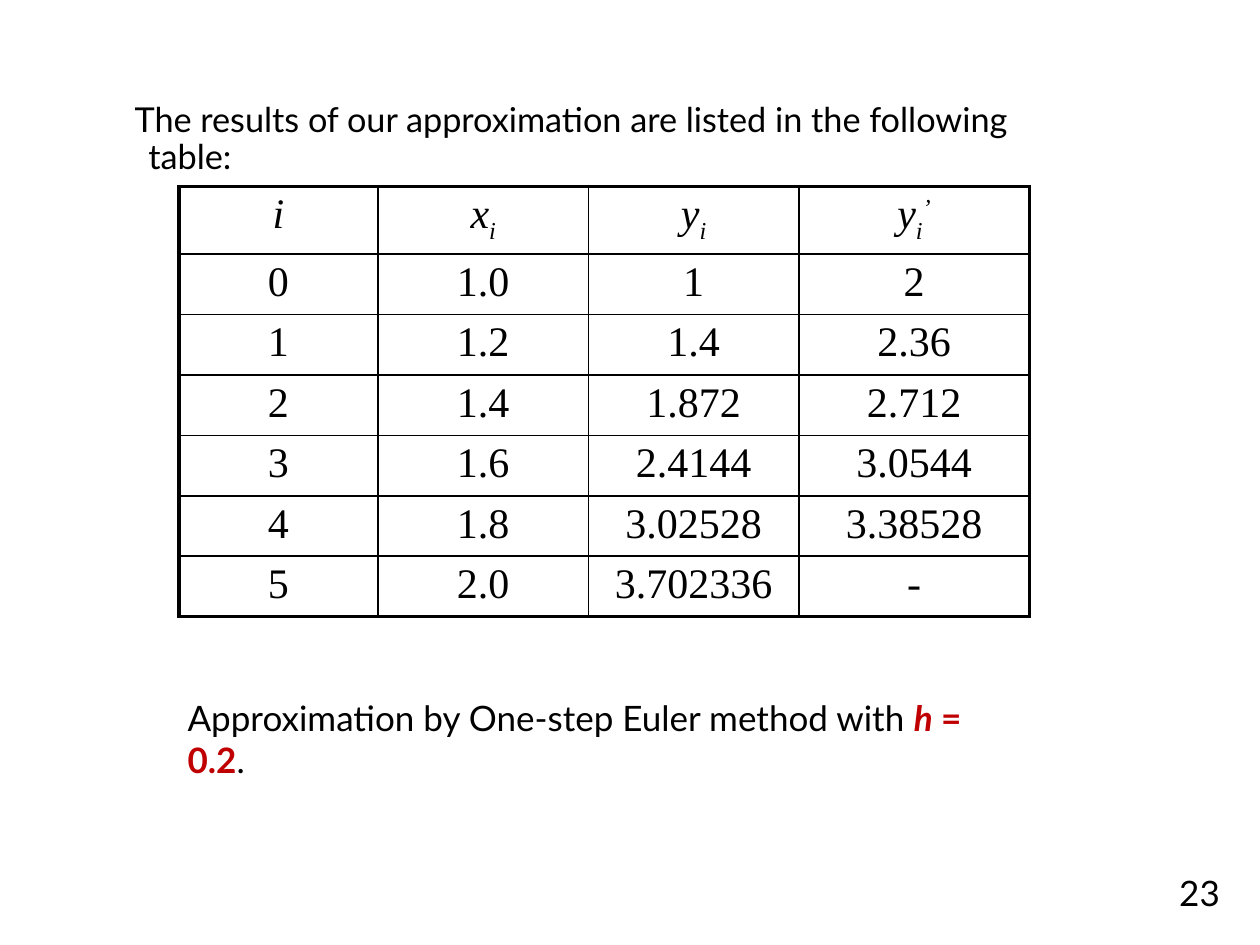
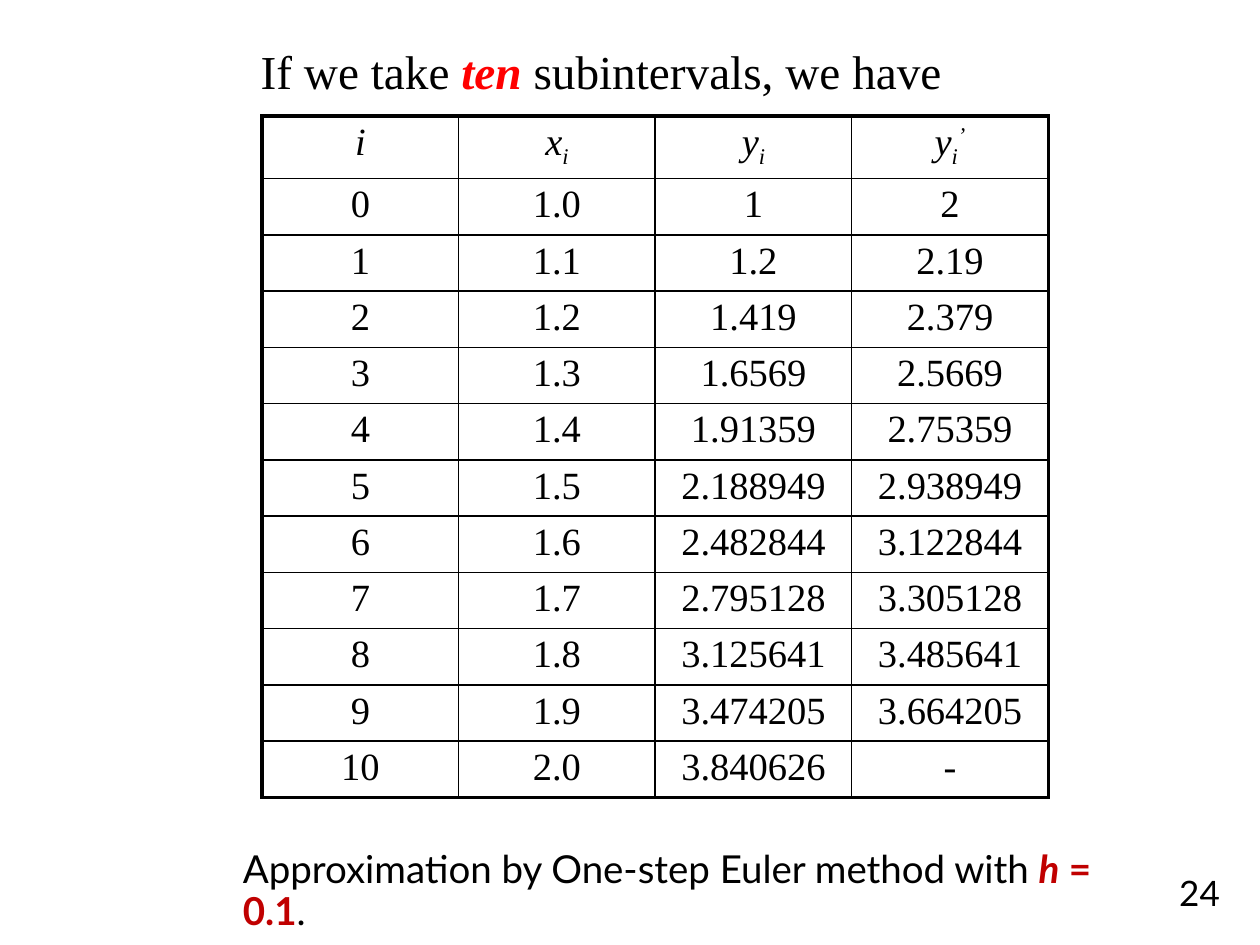
from lxml import etree
from pptx import Presentation
from pptx import util as u
from pptx.dml.color import RGBColor
from pptx.enum import text
from pptx.oxml.ns import qn

SANS, SERIF = "Lato", "Times New Roman"
BLACK, RED, DARK = "000000", "FF0000", "C00000"
THICK, THIN = 2.25, 1
HEADS = [
    [("i", 0)],
    [("x", 0), ("i", -25)],
    [("y", 0), ("i", -25)],
    [("y", 0), ("i", -25), ("’", 30)],
]


def paint(color):
    """Turn a hex string into a colour."""
    return RGBColor.from_string(color)


def euler(count):
    """List the steps of Euler's method for y' = y + 2x - x² on [1, 2], y(1) = 1."""
    step, y, rows = 1 / count, 1, []
    for i in range(count + 1):
        x = 1 + i * step
        slope = y + 2 * x - x * x
        last = "-" if i == count else f"{slope:.7g}"
        rows.append([str(i), f"{x:.1f}", f"{y:.7g}", last])
        y += step * slope
    return rows


class Deck:
    """Hold the style and the current slide."""

    def __init__(self):
        """Start an empty deck."""
        self.prs = Presentation()
        self.prs.slide_width = u.Inches(10)
        self.prs.slide_height = u.Inches(7.5)

    def page(self, number):
        """Add a blank slide with its number."""
        self.slide = self.prs.slides.add_slide(self.prs.slide_layouts[6])
        para = self.note((7.7, 6.83, 2.08, 0.5), [(str(number),)], 20,
                         anchor=text.MSO_ANCHOR.MIDDLE)
        para.alignment = text.PP_ALIGN.RIGHT

    def run(self, para, words, size, face, color=BLACK, bold=False, slant=False):
        """Add one formatted run."""
        run = para.add_run()
        run.text = words
        font = run.font
        font.size, font.name = u.Pt(size), face
        font.bold, font.italic = bold, slant
        font.color.rgb = paint(color)
        return run

    def note(self, box, parts, size, face=SANS, anchor=text.MSO_ANCHOR.TOP):
        """Add a text box made of (words, colour, bold, italic) parts."""
        frame = self.slide.shapes.add_textbox(*map(u.Inches, box)).text_frame
        frame.word_wrap = True
        frame.vertical_anchor = anchor
        para = frame.paragraphs[0]
        for words, *look in parts:
            self.run(para, words, size, face, *look)
        return para

    def caption(self, box, step, size):
        """Add the line that names the method and its step."""
        return self.note(box, [
            ("Approximation by One-step Euler method with ",),
            ("h", DARK, True, True),
            (f" = {step}", DARK, True),
            (".",),
        ], size)

    def edge(self, cell, side, width):
        """Draw one border of a cell."""
        line = etree.SubElement(cell._tc.get_or_add_tcPr(), qn(f"a:ln{side}"),
                                w=str(u.Pt(width)))
        fill = etree.SubElement(line, qn("a:solidFill"))
        etree.SubElement(fill, qn("a:srgbClr"), val=BLACK)

    def grid(self, left, top, cols, head, high, size, count):
        """Add the table of Euler steps with a thick outer frame."""
        body = [[[(word, 0)] for word in row] for row in euler(count)]
        rows = [HEADS] + body
        table = self.slide.shapes.add_table(
            len(rows), len(cols), u.Inches(left), u.Inches(top),
            u.Inches(sum(cols)), u.Inches(head + high * len(body))).table
        table.first_row = table.horz_banding = False
        for col, width in zip(table.columns, cols):
            col.width = u.Inches(width)
        for r, row in enumerate(rows):
            table.rows[r].height = u.Inches(high if r else head)
            for c, parts in enumerate(row):
                cell = table.cell(r, c)
                cell.margin_top = cell.margin_bottom = u.Inches(0.04)
                outer = {"L": c == 0, "R": c == len(cols) - 1,
                         "T": r == 0, "B": r == len(rows) - 1}
                for side, rim in outer.items():
                    self.edge(cell, side, THICK if rim else THIN)
                cell.fill.background()
                para = cell.text_frame.paragraphs[0]
                para.alignment = text.PP_ALIGN.CENTER
                for word, shift in parts:
                    run = self.run(para, word, size, SERIF, slant=r == 0)
                    if shift:
                        run.font._element.set("baseline", str(shift * 1000))


def main():
    """Build both slides."""
    deck = Deck()

    deck.page(23)
    deck.grid(1.42, 1.48, [1.58, 1.67, 1.67, 1.83], 0.51, 0.47, 24, 5)
    intro = deck.note((0.7, 0.77, 7.91, 0.75), [
        ("The results of our approximation are listed in the following table:",)],
        19.6)
    intro.line_spacing = 0.9
    props = intro._p.get_or_add_pPr()
    props.set("marL", str(u.Inches(0.38)))
    props.set("indent", str(u.Inches(-0.11)))
    deck.caption((1.39, 5.48, 6.42, 0.77), 0.2, 20)

    deck.page(24)
    deck.note((1.97, 0.29, 6.82, 0.56), [
        ("If we take ",), ("ten", RED, True, True), (" subintervals, we have",)],
        27, SERIF)
    deck.grid(2.08, 0.92, [1.56] * 4, 0.49, 0.44, 22, 10)
    deck.caption((1.83, 6.7, 7.06, 0.44), 0.1, 22).line_spacing = 0.9

    deck.prs.save("out.pptx")


if __name__ == "__main__":
    main()
